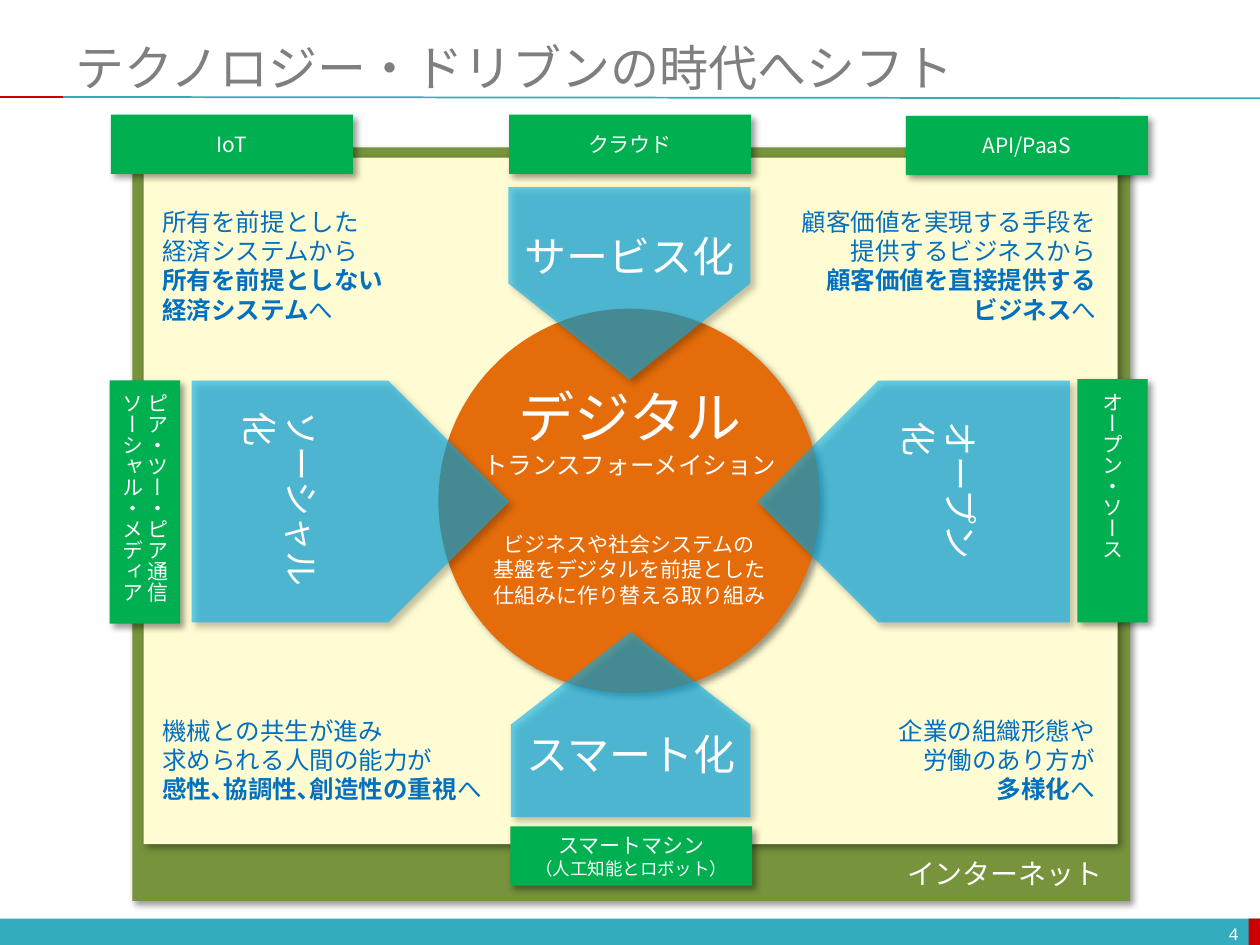
from dataclasses import dataclass

from lxml import etree
from pptx import Presentation
from pptx.dml.color import RGBColor
from pptx.enum.shapes import MSO_CONNECTOR, MSO_SHAPE
from pptx.enum.text import MSO_ANCHOR, MSO_AUTO_SIZE, PP_ALIGN
from pptx.oxml.ns import qn
from pptx.util import Inches, Pt


@dataclass(frozen=True)
class Theme:
    teal: str = "33ACBD"
    red: str = "CC0000"
    olive: str = "77933C"
    cream: str = "FFFBD2"
    orange: str = "E46C0A"
    sky: str = "00B0F0"
    green: str = "00B050"
    blue: str = "0070C0"
    gray: str = "7F7F7F"
    white: str = "FFFFFF"
    title: int = 28
    hero: int = 32
    arrow: int = 24
    side: int = 20
    network: int = 16
    body: int = 14
    label: int = 12
    small: int = 10
    font: str = "Noto Sans CJK JP"
    title_font: str = "Calibri"
    number_font: str = "Courier New"


theme = Theme()
LEFT, CENTER, RIGHT = PP_ALIGN.LEFT, PP_ALIGN.CENTER, PP_ALIGN.RIGHT


def add_block(kind, box, color, shadow=True, alpha=None, rotation=0):
    shape = slide.shapes.add_shape(kind, *map(Inches, box))
    shape.rotation = rotation
    shape.fill.solid()
    shape.fill.fore_color.rgb = RGBColor.from_string(color)
    shape.line.fill.background()
    shape.shadow.inherit = False
    properties = shape._element.spPr
    if alpha:
        fill_color = properties.find(qn("a:solidFill"))[0]
        etree.SubElement(fill_color, qn("a:alpha"), val=str(alpha * 1000))
    if shadow:
        outer = etree.SubElement(
            properties.find(qn("a:effectLst")), qn("a:outerShdw"),
            blurRad=str(Pt(4)), dist=str(Pt(3)), dir="2700000", algn="tl", rotWithShape="0")
        black = etree.SubElement(outer, qn("a:srgbClr"), val="000000")
        etree.SubElement(black, qn("a:alpha"), val="40000")
    return shape


def write_text(shape, lines, color, align, settings, font=theme.font):
    frame = shape.text_frame
    for name, value in settings.items():
        setattr(frame, name, value)
    for index, runs in enumerate(lines):
        paragraph = frame.paragraphs[0] if index == 0 else frame.add_paragraph()
        paragraph.alignment = align
        for text, size, bold in runs:
            run = paragraph.add_run()
            run.text = text
            style = {"name": font, "size": Pt(size), "bold": bold}
            for name, value in style.items():
                setattr(run.font, name, value)
            run.font.color.rgb = RGBColor.from_string(color)
            east_asian = etree.SubElement(run._r.get_or_add_rPr(), qn("a:ea"))
            east_asian.set("typeface", theme.font)


presentation = Presentation()
presentation.slide_width, presentation.slide_height = Inches(10), Inches(7.5)
slide = presentation.slides.add_slide(presentation.slide_layouts[6])

add_block(MSO_SHAPE.RECTANGLE, (0, 7.29, 10, 0.22), theme.teal, shadow=False)
add_block(MSO_SHAPE.RECTANGLE, (9.91, 7.29, 0.1, 0.22), theme.red, shadow=False)

for start, end, bottom, color in [(0.5, 10, 0.78, theme.teal), (0, 0.5, 0.77, theme.red)]:
    rule = slide.shapes.add_connector(
        MSO_CONNECTOR.STRAIGHT, Inches(start), Inches(0.77), Inches(end), Inches(bottom))
    rule.line.color.rgb = RGBColor.from_string(color)
    rule.line.width = Pt(1)
    etree.SubElement(rule._element.spPr, qn("a:effectLst"))

middle = {"word_wrap": True, "vertical_anchor": MSO_ANCHOR.MIDDLE}
growing = {"word_wrap": False, "auto_size": MSO_AUTO_SIZE.SHAPE_TO_FIT_TEXT}
wrapping = {"word_wrap": True, "auto_size": MSO_AUTO_SIZE.NONE}

add_block(MSO_SHAPE.RECTANGLE, (1.05, 1.17, 7.92, 5.98), theme.olive)

for box, text, size, color, align, font in [
    ((0.5, 0.3, 9.5, 0.46), "テクノロジー・ドリブンの時代へシフト",
     theme.title, theme.gray, LEFT, theme.title_font),
    ((7.6, 7.29, 2.33, 0.24), "4", theme.small, theme.white, RIGHT, theme.number_font),
]:
    text_box = slide.shapes.add_textbox(*map(Inches, box))
    write_text(text_box, [[(text, size, False)]], color, align, middle, font)

add_block(MSO_SHAPE.RECTANGLE, (1.14, 1.25, 7.73, 5.45), theme.cream)
add_block(MSO_SHAPE.OVAL, (3.48, 2.45, 3.03, 3.05), theme.orange)

for box, rotation in [
    ((1.52, 3.02, 2.52, 1.92), 0),
    ((6.01, 3.02, 2.48, 1.92), 180),
    ((4.27, 4.8, 1.47, 1.9), 270),
    ((4.23, 1.29, 1.53, 1.92), 90),
]:
    add_block(MSO_SHAPE.PENTAGON, box, theme.sky, alpha=60, rotation=rotation)

body, label = theme.body, theme.label
for box, color, align, lines in [
    ((3.72, 2.99, 2.56, 0.88), theme.white, CENTER,
     [[("デジタル", theme.hero, False)], [("トランスフォーメイション", body, False)]]),
    ((4.06, 1.78, 1.88, 0.5), theme.white, CENTER, [[("サービス化", theme.arrow, False)]]),
    ((4.07, 5.73, 1.88, 0.5), theme.white, CENTER, [[("スマート化", theme.arrow, False)]]),
    ((1.19, 1.59, 1.97, 1.04), theme.blue, LEFT,
     [[("所有を前提とした", body, False)], [("経済システムから", body, False)],
      [("所有を前提としない", body, True)],
      [("経済システム", body, True), ("へ", body, False)]]),
    ((6.24, 1.59, 2.56, 1.04), theme.blue, RIGHT,
     [[("顧客価値を実現する手段を", body, False)], [("提供するビジネスから", body, False)],
      [("顧客価値を直接提供する", body, True)],
      [("ビジネス", body, True), ("へ", body, False)]]),
    ((1.19, 5.63, 2.75, 0.81), theme.blue, LEFT,
     [[("機械との共生が進み", body, False)], [("求められる人間の能力が", body, False)],
      [("感性､協調性､創造性の重視", body, True), ("へ", body, False)]]),
    ((7.02, 5.63, 1.77, 0.81), theme.blue, RIGHT,
     [[("企業の組織形態や", body, False)], [("労働のあり方が", body, False)],
      [("多様化", body, True), ("へ", body, False)]]),
    ((3.8, 4.17, 2.39, 0.71), theme.white, CENTER,
     [[("ビジネスや社会システムの", label, False)], [("基盤をデジタルを前提とした", label, False)],
      [("仕組みに作り替える取り組み", label, False)]]),
    ((7.09, 6.75, 1.77, 0.37), theme.white, CENTER,
     [[("インターネット", theme.network, False)]]),
]:
    text_box = slide.shapes.add_textbox(*map(Inches, box))
    write_text(text_box, lines, color, align, growing)

for box, vertical, lines in [
    ((4.04, 0.91, 1.92, 0.47), False, [("クラウド", label)]),
    ((4.05, 6.56, 1.92, 0.47), False,
     [("スマートマシン", label), ("（人工知能とロボット）", theme.small)]),
    ((0.88, 0.91, 1.92, 0.47), False, [("IoT", label)]),
    ((7.19, 0.92, 1.92, 0.47), False, [("API/PaaS", label)]),
    ((0.87, 3.02, 0.56, 1.93), True,
     [("ピア・ツー・ピア通信", label), ("ソーシャル・メディア", label)]),
    ((8.55, 3.01, 0.56, 1.93), True, [("オープン・ソース", label)]),
]:
    tag = add_block(MSO_SHAPE.RECTANGLE, box, theme.green)
    write_text(tag, [[(text, size, False)] for text, size in lines], theme.white, CENTER, middle)
    if vertical:
        tag.text_frame._txBody.bodyPr.set("vert", "eaVert")

for box, text in [
    ((1.57, 3.78, 1.66, 0.44), "ソーシャル化"),
    ((6.89, 3.76, 1.47, 0.44), "オープン化"),
]:
    text_box = slide.shapes.add_textbox(*map(Inches, box))
    text_box.rotation = 90
    write_text(text_box, [[(text, theme.side, False)]], theme.white, LEFT, wrapping)

presentation.save("out.pptx")
